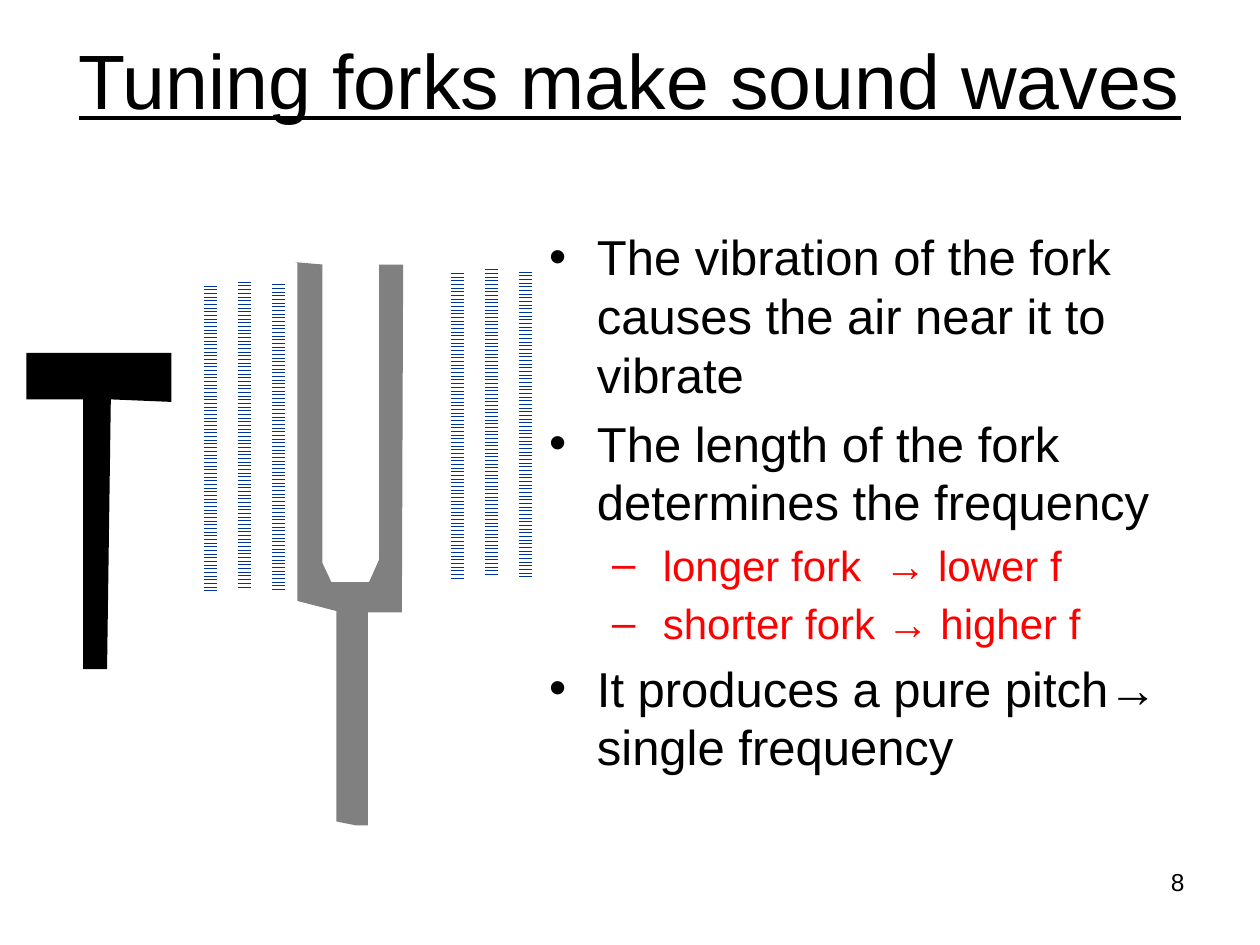
from lxml import etree
from pptx import Presentation
from pptx.dml.color import RGBColor
from pptx.enum import dml, shapes, text
from pptx.oxml.ns import qn
from pptx.util import Inches, Pt

BLACK, RED, GREY, BLUE, WHITE = "000000", "FF0000", "808080", "003399", "FFFFFF"

TITLE = "Tuning forks make sound waves"
PAGE_NUMBER = "8"
POINTS = [  # (level, text)
    (0, "The vibration of the fork causes the air near it to vibrate"),
    (0, "The length of the fork determines the frequency"),
    (1, " longer fork  → lower f"),
    (1, " shorter fork → higher f"),
    (0, "It produces a pure pitch→ single frequency"),
]
LEVELS = [
    dict(size=28, color=BLACK, bullet="•", margin=0.38, hanging=0.38),
    dict(size=24, color=RED, bullet="–", margin=0.81, hanging=0.31),
]
FORK = [
    (2.33, 2.08), (2.56, 2.1), (2.56, 4.47), (2.63, 4.62), (2.93, 4.62), (3.01, 4.44),
    (3.01, 2.1), (3.2, 2.1), (3.19, 4.86), (2.92, 4.86), (2.92, 6.55), (2.82, 6.55),
    (2.67, 6.52), (2.67, 4.85), (2.36, 4.77), (2.36, 2.08),
]
HAMMER = [
    (0.66, 5.31), (0.66, 3.17), (0.21, 3.17), (0.21, 2.8),
    (1.36, 2.8), (1.36, 3.19), (0.88, 3.17), (0.85, 5.31),
]
WAVE_GROUPS = [(3.58, 2.14), (1.62, 2.24)]  # left and top of the first wave
WAVE_STEPS = [(0, 0), (2, -0.01), (1, -0.03)]  # column, vertical shift
WAVE_PITCH, WAVE_WIDTH, WAVE_HEIGHT = 0.27, 0.1, 2.45


def rgb(value):
    return RGBColor.from_string(value)


def write(paragraph, content, size, color=BLACK, align=text.PP_ALIGN.LEFT,
          underline=None, bullet=None, margin=0, hanging=0):
    paragraph.alignment = align
    run = paragraph.add_run()
    run.text = content
    font = run.font
    font.name, font.size, font.underline = "Arial", Pt(size), underline
    font.color.rgb = rgb(color)
    if bullet:
        paragraph.space_before = Pt(size * 0.2)
        properties = paragraph._p.get_or_add_pPr()
        properties.set("marL", str(Inches(margin)))
        properties.set("indent", str(-Inches(hanging)))
        etree.SubElement(properties, qn("a:buFont")).set("typeface", "Arial")
        etree.SubElement(properties, qn("a:buChar")).set("char", bullet)


def add_text_frame(slide, left, top, width, height, anchor=text.MSO_ANCHOR.TOP):
    box = slide.shapes.add_textbox(*map(Inches, (left, top, width, height)))
    frame = box.text_frame
    frame.word_wrap = True
    frame.vertical_anchor = anchor
    return frame


def add_outline(slide, points, color, close):
    start, *rest = [(Inches(x), Inches(y)) for x, y in points]
    builder = slide.shapes.build_freeform(*start)
    builder.add_line_segments(rest, close=close)
    outline = builder.convert_to_shape()
    outline.shadow.inherit = False
    outline.fill.solid()
    outline.fill.fore_color.rgb = rgb(color)
    outline.line.fill.background()


def add_waves(slide, left, top):
    group = slide.shapes.add_group_shape()
    for column, shift in WAVE_STEPS:
        place = left + column * WAVE_PITCH, top + shift, WAVE_WIDTH, WAVE_HEIGHT
        wave = group.shapes.add_shape(shapes.MSO_SHAPE.RECTANGLE, *map(Inches, place))
        wave.shadow.inherit = False
        wave.fill.patterned()
        wave.fill.pattern = dml.MSO_PATTERN.ZIG_ZAG
        wave.fill.fore_color.rgb = rgb(BLUE)
        wave.fill.back_color.rgb = rgb(WHITE)
        wave.line.fill.background()


def main():
    deck = Presentation()
    deck.slide_width, deck.slide_height = Inches(10), Inches(7.5)
    slide = deck.slides.add_slide(deck.slide_layouts[6])

    title = add_text_frame(slide, 0, 0, 10, 1.25, text.MSO_ANCHOR.MIDDLE)
    write(title.paragraphs[0], TITLE, 44, align=text.PP_ALIGN.CENTER, underline=True)

    body = add_text_frame(slide, 4.26, 1.75, 5.24, 4.95)
    for i, (level, point) in enumerate(POINTS):
        paragraph = body.add_paragraph() if i else body.paragraphs[0]
        paragraph.level = level
        write(paragraph, point, **LEVELS[level])

    add_outline(slide, FORK, GREY, close=False)
    add_outline(slide, HAMMER, BLACK, close=True)
    for left, top in WAVE_GROUPS:
        add_waves(slide, left, top)

    number = add_text_frame(slide, 7.17, 6.83, 2.33, 0.52)
    write(number.paragraphs[0], PAGE_NUMBER, 14, align=text.PP_ALIGN.RIGHT)
    deck.save("out.pptx")


if __name__ == "__main__":
    main()
